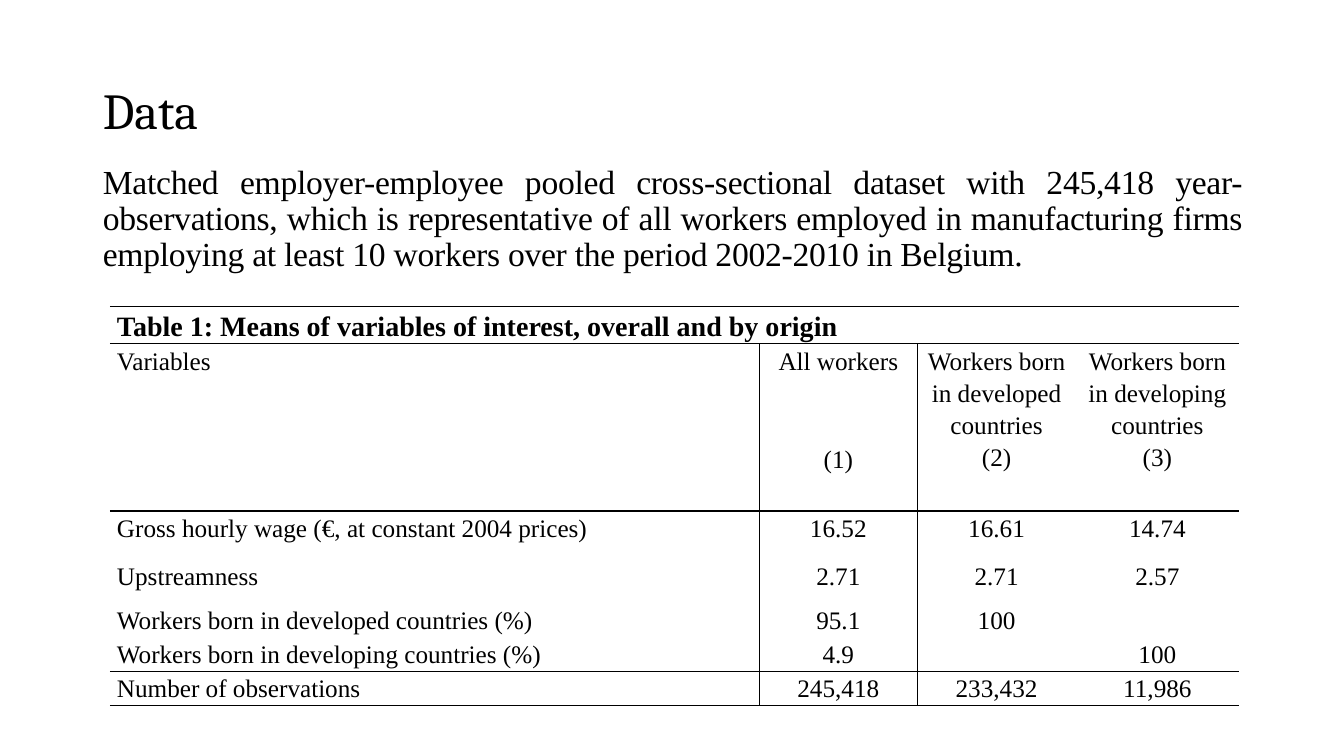
from lxml.etree import SubElement
from pptx import Presentation
from pptx.dml.color import RGBColor
from pptx.enum.text import MSO_ANCHOR as Anchor, MSO_AUTO_SIZE as AutoSize, PP_ALIGN as Align
from pptx.oxml.ns import qn
from pptx.util import Inches, Pt

COLORS = {"ink": "000000", "paper": "FFFFFF"}
NO_STYLE = "{2D5ABB26-0587-4C30-8999-92F81FD0307C}"
HEADING = "Cambria"
SERIF = "Times New Roman"

INTRO = (
    "Matched employer-employee pooled cross-sectional dataset with 245,418 "
    "year-observations, which is representative of all workers employed in "
    "manufacturing firms employing at least 10 workers over the period "
    "2002-2010 in Belgium."
)
CAPTION = "Table 1: Means of variables of interest, overall and by origin"
HEADERS = [
    ["Variables"],
    ["All workers", "(1)"],
    ["Workers born in developed countries", "(2)"],
    ["Workers born in developing countries", "(3)"],
]
MEANS = [
    ["Gross hourly wage (€, at constant 2004 prices)", "16.52", "16.61", "14.74"],
    ["Upstreamness", "2.71", "2.71", "2.57"],
    ["Workers born in developed countries (%)", "95.1", "100", ""],
    ["Workers born in developing countries (%)", "4.9", "", "100"],
    ["Number of observations", "245,418", "233,432", "11,986"],
]
COLUMN_WIDTHS = [6.44, 1.57, 1.57, 1.62]
ROW_HEIGHTS = [0.37, 1.66, 0.47, 0.44, 0.34, 0.34, 0.34]
RULES_ABOVE = {0, 1, 2, 6, 7}
RULES_RIGHT = {0, 1}
COLUMN_NUMBER_GAP = 47


def write(paragraph, text, size=18, font=SERIF, bold=False, align=Align.LEFT,
          line=1.15, before=0, after=0, tracking=None):
    paragraph.alignment = align
    paragraph.line_spacing = line
    paragraph.space_before = Pt(before)
    paragraph.space_after = Pt(after)
    run = paragraph.add_run()
    run.text = text
    run.font.size = Pt(size)
    run.font.name = font
    run.font.bold = bold
    run.font.color.rgb = RGBColor.from_string(COLORS["ink"])
    if tracking is not None:
        run.font._element.set("spc", str(round(tracking * 100)))


class DataSlide:
    def __init__(self, deck):
        self.slide = deck.slides.add_slide(deck.slide_layouts[1])
        background = self.slide.background.fill
        background.solid()
        background.fore_color.rgb = RGBColor.from_string(COLORS["paper"])

    def place(self, holder, left, top, width, height, anchor):
        holder.left, holder.top = Inches(left), Inches(top)
        holder.width, holder.height = Inches(width), Inches(height)
        frame = holder.text_frame
        frame.word_wrap = True
        frame.auto_size = AutoSize.NONE
        frame.vertical_anchor = anchor
        return frame.paragraphs[0]

    def title(self, text):
        heading = self.place(self.slide.shapes.title, 0.92, 0.4, 11.5, 1.45, Anchor.MIDDLE)
        write(heading, text, size=36, font=HEADING, line=0.9)

    def body(self, text):
        intro = self.place(self.slide.placeholders[1], 0.92, 1.59, 11.5, 5.17, Anchor.TOP)
        write(intro, text, size=24, align=Align.JUSTIFY, line=0.9, before=10, tracking=-0.2)
        properties = intro._p.get_or_add_pPr()
        properties.set("marL", "0")
        properties.set("indent", "0")
        SubElement(properties, qn("a:buNone"))

    def rule(self, cell, side, drawn):
        edge = SubElement(cell._tc.get_or_add_tcPr(), qn(f"a:ln{side}"), w=str(Pt(1)))
        if drawn:
            fill = SubElement(edge, qn("a:solidFill"))
            SubElement(fill, qn("a:srgbClr"), val=COLORS["ink"])
        else:
            SubElement(edge, qn("a:noFill"))

    def format_cell(self, cell, row, column):
        cell.margin_left = cell.margin_right = Inches(0.07)
        cell.margin_top = cell.margin_bottom = 0
        self.rule(cell, "L", row > 0 and column - 1 in RULES_RIGHT)
        self.rule(cell, "R", row > 0 and column in RULES_RIGHT)
        self.rule(cell, "T", row in RULES_ABOVE)
        self.rule(cell, "B", row + 1 in RULES_ABOVE)
        cell.fill.background()

    def table(self, left, top):
        frame = self.slide.shapes.add_table(
            len(ROW_HEIGHTS), len(COLUMN_WIDTHS), Inches(left), Inches(top),
            Inches(sum(COLUMN_WIDTHS)), Inches(sum(ROW_HEIGHTS)))
        means = frame.table
        means.first_row = means.horz_banding = False
        means._tbl.tblPr.find(qn("a:tableStyleId")).text = NO_STYLE
        for column, width in zip(means.columns, COLUMN_WIDTHS):
            column.width = Inches(width)
        for row, height in zip(means.rows, ROW_HEIGHTS):
            row.height = Inches(height)
        for row in range(len(ROW_HEIGHTS)):
            for column in range(len(COLUMN_WIDTHS)):
                self.format_cell(means.cell(row, column), row, column)

        caption = means.cell(0, 0)
        caption.merge(means.cell(0, len(COLUMN_WIDTHS) - 1))
        caption.vertical_anchor = Anchor.MIDDLE
        write(caption.text_frame.paragraphs[0], CAPTION, size=20, bold=True, after=6)

        for column, (label, *number) in enumerate(HEADERS):
            header = means.cell(1, column).text_frame
            align = Align.CENTER if column else Align.LEFT
            write(header.paragraphs[0], label, align=align)
            for text in number:
                gap = COLUMN_NUMBER_GAP if column == 1 else 0
                write(header.add_paragraph(), text, align=align, before=gap)

        for row, values in enumerate(MEANS, start=2):
            for column, value in enumerate(values):
                if value:
                    align = Align.CENTER if column else Align.JUSTIFY
                    write(means.cell(row, column).text_frame.paragraphs[0], value, align=align)


def main():
    deck = Presentation()
    deck.slide_width, deck.slide_height = Inches(13.33), Inches(7.5)
    data = DataSlide(deck)
    data.title("Data")
    data.body(INTRO)
    data.table(1.09, 3.04)
    deck.save("out.pptx")


if __name__ == "__main__":
    main()
